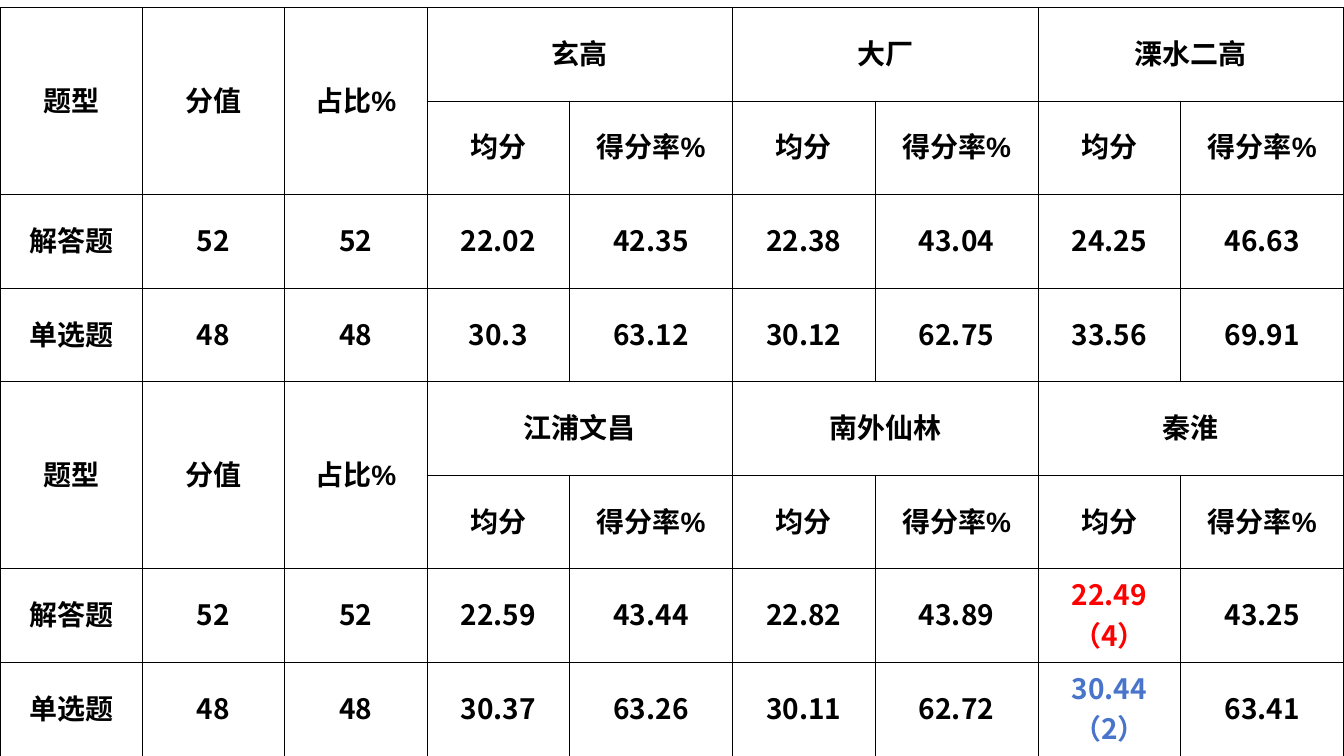
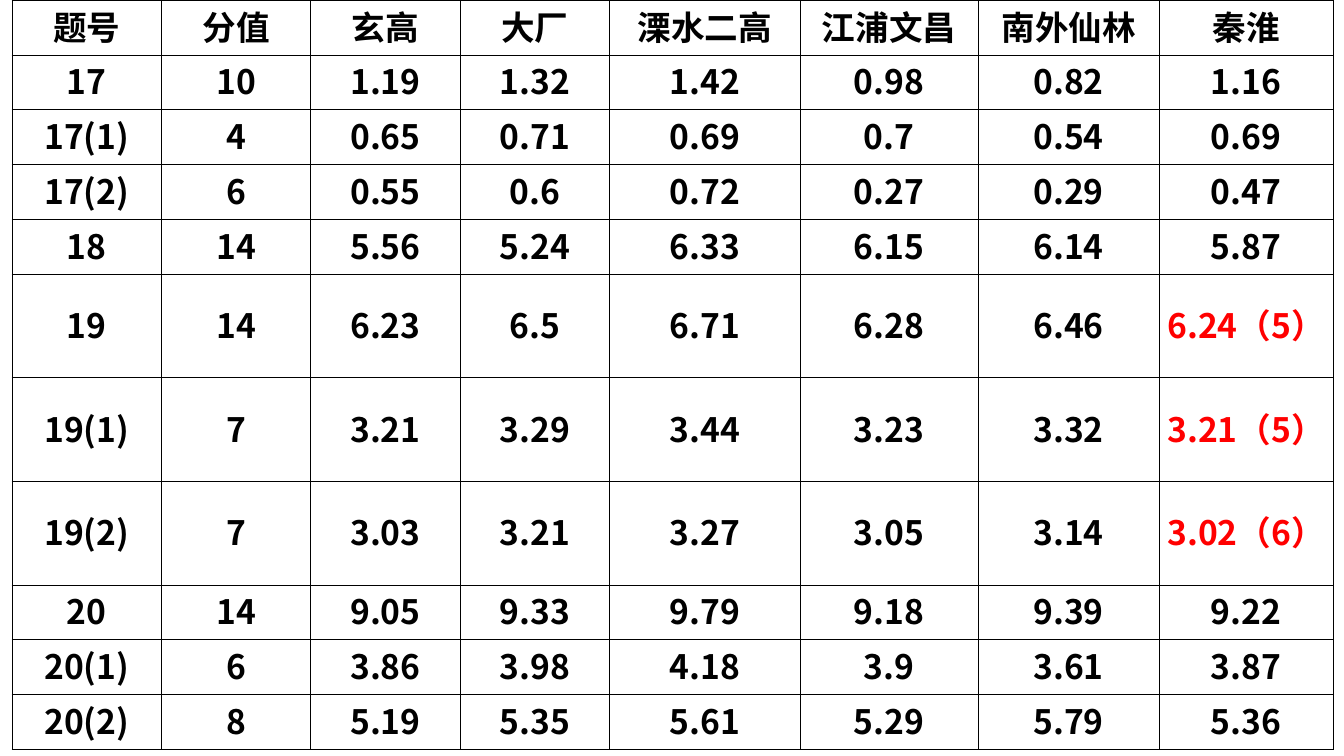
import dataclasses

import lxml.etree
import pptx
import pptx.dml.color
import pptx.enum.text
import pptx.oxml.ns
import pptx.util


@dataclasses.dataclass(frozen=True)
class Theme:
    text: str = "000000"
    low: str = "FF0000"
    high: str = "4874CB"
    border: str = "000000"
    border_width: float = 0.5
    label_font: str = "Arial"
    number_font: str = "Noto Sans CJK SC"
    overview_size: float = 20
    detail_size: float = 24
    inset: float = 0.75
    inset_bottom: float = 3.6


THEME = Theme()
BLANK_LAYOUT = 6
SLIDE_WIDTH = 960
SLIDE_HEIGHT = 540

OVERVIEW_COLUMNS = [101.7] * 4 + [116.6, 101.7] * 2 + [116.6]
DETAIL_COLUMNS = [106.7] * 4 + [136, 127.5, 129, 124.6]

OVERVIEW_BLOCKS = [
    (
        ["玄高", "大厂", "溧水二高"],
        ["22.02", "42.35", "22.38", "43.04", "24.25", "46.63"],
        ["30.3", "63.12", "30.12", "62.75", "33.56", "69.91"],
    ),
    (
        ["江浦文昌", "南外仙林", "秦淮"],
        ["22.59", "43.44", "22.82", "43.89", "22.49（4）", "43.25"],
        ["30.37", "63.26", "30.11", "62.72", "30.44（2）", "63.41"],
    ),
]

DETAIL_ROWS = [
    ["题号", "分值", "玄高", "大厂", "溧水二高", "江浦文昌", "南外仙林", "秦淮"],
    ["17", "10", "1.19", "1.32", "1.42", "0.98", "0.82", "1.16"],
    ["17(1)", "4", "0.65", "0.71", "0.69", "0.7", "0.54", "0.69"],
    ["17(2)", "6", "0.55", "0.6", "0.72", "0.27", "0.29", "0.47"],
    ["18", "14", "5.56", "5.24", "6.33", "6.15", "6.14", "5.87"],
    ["19", "14", "6.23", "6.5", "6.71", "6.28", "6.46", "6.24（5）"],
    ["19(1)", "7", "3.21", "3.29", "3.44", "3.23", "3.32", "3.21（5）"],
    ["19(2)", "7", "3.03", "3.21", "3.27", "3.05", "3.14", "3.02（6）"],
    ["20", "14", "9.05", "9.33", "9.79", "9.18", "9.39", "9.22"],
    ["20(1)", "6", "3.86", "3.98", "4.18", "3.9", "3.61", "3.87"],
    ["20(2)", "8", "5.19", "5.35", "5.61", "5.29", "5.79", "5.36"],
]


def add_element(parent, tag, **attributes):
    return lxml.etree.SubElement(parent, pptx.oxml.ns.qn(tag), **attributes)


def write_text(cell, text, *, size, color, font):
    paragraph = cell.text_frame.paragraphs[0]
    paragraph.alignment = pptx.enum.text.PP_ALIGN.CENTER
    run = paragraph.add_run()
    run.text = text
    run.font.name = font
    run.font.size = pptx.util.Pt(size)
    run.font.bold = True
    run.font.color.rgb = pptx.dml.color.RGBColor.from_string(color)
    add_element(run.font._element, "a:ea", typeface=THEME.number_font)


def format_cell(cell):
    cell.vertical_anchor = pptx.enum.text.MSO_ANCHOR.MIDDLE
    cell.margin_left = cell.margin_right = cell.margin_top = pptx.util.Pt(THEME.inset)
    cell.margin_bottom = pptx.util.Pt(THEME.inset_bottom)
    properties = cell._tc.get_or_add_tcPr()
    for side in ("L", "R", "T", "B"):
        width = str(pptx.util.Pt(THEME.border_width))
        line = add_element(properties, f"a:ln{side}", w=width)
        add_element(add_element(line, "a:solidFill"), "a:srgbClr", val=THEME.border)
    cell.fill.background()


def text_color(text, highlights):
    if text in highlights:
        return highlights[text]
    return THEME.low if "（" in text else THEME.text


def add_score_table(slide, rows, *, left, top, height, columns, size, highlights):
    frame = slide.shapes.add_table(
        len(rows), len(columns),
        pptx.util.Pt(left), pptx.util.Pt(top),
        pptx.util.Pt(sum(columns)), pptx.util.Pt(height),
    )
    table = frame.table
    table.first_row = False
    table.horz_banding = False
    for column, width in zip(table.columns, columns):
        column.width = pptx.util.Pt(width)
    for row_index, row in enumerate(rows):
        for column_index, text in enumerate(row):
            cell = table.cell(row_index, column_index)
            format_cell(cell)
            if text:
                font = THEME.number_font if text[0].isdigit() else THEME.label_font
                write_text(cell, text, size=size, font=font,
                           color=text_color(text, highlights))
    return table


def overview_rows(schools, answer_scores, choice_scores):
    school_cells = [text for school in schools for text in (school, "")]
    return [
        ["题型", "分值", "占比%"] + school_cells,
        [""] * 3 + ["均分", "得分率%"] * len(schools),
        ["解答题", "52", "52"] + answer_scores,
        ["单选题", "48", "48"] + choice_scores,
    ]


def merge_headings(table, first_row):
    for column in range(3):
        table.cell(first_row, column).merge(table.cell(first_row + 1, column))
    for column in range(3, len(table.columns), 2):
        table.cell(first_row, column).merge(table.cell(first_row, column + 1))


def add_overview_slide(presentation):
    slide = presentation.slides.add_slide(presentation.slide_layouts[BLANK_LAYOUT])
    blocks = [overview_rows(*block) for block in OVERVIEW_BLOCKS]
    table = add_score_table(
        slide, sum(blocks, []), left=0, top=5.2, height=534.8,
        columns=OVERVIEW_COLUMNS, size=THEME.overview_size,
        highlights={"30.44（2）": THEME.high},
    )
    for index, block in enumerate(blocks):
        merge_headings(table, index * len(block))


def add_detail_slide(presentation):
    slide = presentation.slides.add_slide(presentation.slide_layouts[BLANK_LAYOUT])
    add_score_table(
        slide, DETAIL_ROWS, left=8.6, top=0, height=367.2,
        columns=DETAIL_COLUMNS, size=THEME.detail_size, highlights={},
    )


def main():
    presentation = pptx.Presentation()
    presentation.slide_width = pptx.util.Pt(SLIDE_WIDTH)
    presentation.slide_height = pptx.util.Pt(SLIDE_HEIGHT)
    add_overview_slide(presentation)
    add_detail_slide(presentation)
    presentation.save("out.pptx")


if __name__ == "__main__":
    main()
